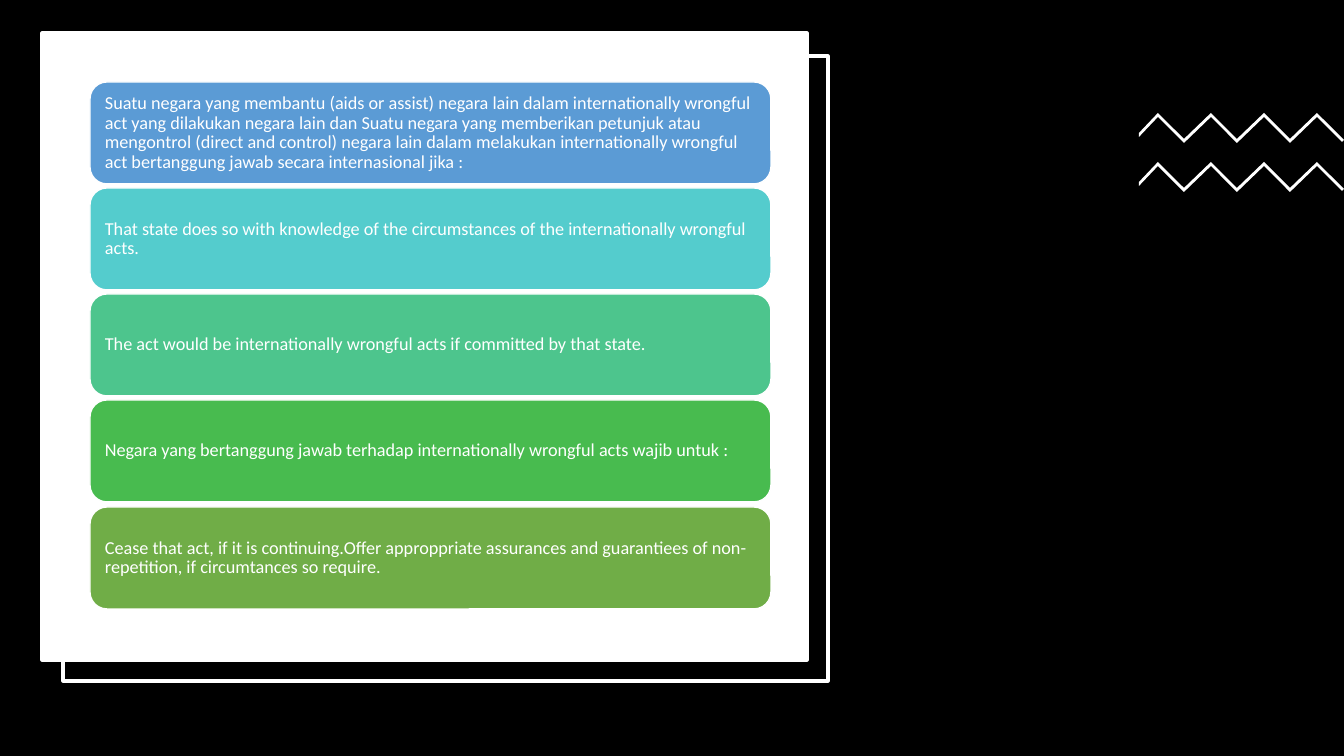
from dataclasses import dataclass

from pptx import Presentation
from pptx.dml.color import RGBColor as RGB
from pptx.enum.shapes import MSO_SHAPE as SHAPE
from pptx.enum.text import MSO_ANCHOR as ANCHOR, PP_ALIGN as ALIGN
from pptx.util import Emu, Pt

EMU_PER_PX = 914400 / 100.8


@dataclass(frozen=True)
class Theme:
    dark: str = "000000"
    light: str = "FFFFFF"
    cards: tuple = ("5B9BD5", "54CCCD", "4DC58D", "48BB4F", "70AD47")
    font: str = "Calibri"
    text_size: int = 13
    frame_line: float = 2.25
    card_line: float = 1


THEME = Theme()

CARD_TEXTS = (
    "Suatu negara yang membantu (aids or assist) negara lain dalam "
    "internationally wrongful act yang dilakukan negara lain dan Suatu negara "
    "yang memberikan petunjuk atau mengontrol (direct and control) negara lain "
    "dalam melakukan internationally wrongful act bertanggung jawab secara "
    "internasional jika :",
    "That state does so with knowledge of the circumstances of the "
    "internationally wrongful acts.",
    "The act would be internationally wrongful acts if committed by that state.",
    "Negara yang bertanggung jawab terhadap internationally wrongful acts "
    "wajib untuk :",
    "Cease that act, if it is continuing.Offer approppriate assurances and "
    "guarantiees of non-repetition, if circumtances so require.",
)


def px(n):
    return Emu(round(n * EMU_PER_PX))


def set_all(obj, values):
    for name, value in values.items():
        setattr(obj, name, value)


def paint(sp, fill, line_width=None):
    sp.shadow.inherit = False
    sp.fill.solid()
    sp.fill.fore_color.rgb = RGB.from_string(fill)
    if line_width is None:
        sp.line.fill.background()
    else:
        sp.line.color.rgb = RGB.from_string(THEME.light)
        sp.line.width = Pt(line_width)


def add_box(s, box, fill, line_width=None, kind=SHAPE.RECTANGLE):
    sp = s.shapes.add_shape(kind, *map(px, box))
    paint(sp, fill, line_width)
    return sp


def add_card(s, box, fill, text):
    sp = add_box(s, box, fill, THEME.card_line, SHAPE.ROUNDED_RECTANGLE)
    tf = sp.text_frame
    inset = px(10)
    set_all(tf, dict(word_wrap=True, vertical_anchor=ANCHOR.MIDDLE,
                     margin_left=inset, margin_right=inset,
                     margin_top=inset, margin_bottom=inset))
    p = tf.paragraphs[0]
    set_all(p, dict(alignment=ALIGN.LEFT, line_spacing=0.9))
    r = p.add_run()
    r.text = text
    set_all(r.font, dict(name=THEME.font, size=Pt(THEME.text_size)))
    r.font.color.rgb = RGB.from_string(THEME.light)


def add_zigzag(s, top):
    # Peaks and valleys alternate; the lower edge runs back 4 px below
    teeth = [(1158 + i * 53 // 2, top + i % 2 * 26) for i in range(7)]
    lower = [(x, y + 4) for x, y in reversed(teeth)]
    outline = [(1139, top + 20), *teeth, (1344, top + 27),
               (1342, top + 29), *lower, (1139, top + 24)]
    fb = s.shapes.build_freeform(*outline[0], scale=EMU_PER_PX)
    fb.add_line_segments(outline[1:], close=True)
    paint(fb.convert_to_shape(), THEME.light)


def main():
    prs = Presentation()
    set_all(prs, dict(slide_width=px(1344), slide_height=px(756)))
    s = prs.slides.add_slide(prs.slide_layouts[6])

    # Backdrop, offset frame and white panel
    add_box(s, (0, 0, 1344, 756), THEME.dark)
    add_box(s, (63, 56, 765, 625), THEME.dark, THEME.frame_line)
    add_box(s, (42, 33, 765, 627), THEME.light, THEME.frame_line)

    # Zigzag ornament
    for top in (113, 162):
        add_zigzag(s, top)

    # Stack of cards
    for i, (fill, text) in enumerate(zip(THEME.cards, CARD_TEXTS)):
        add_card(s, (90, 82 + i * 425 // 4, 681, 102), fill, text)

    prs.save("out.pptx")


if __name__ == "__main__":
    main()
